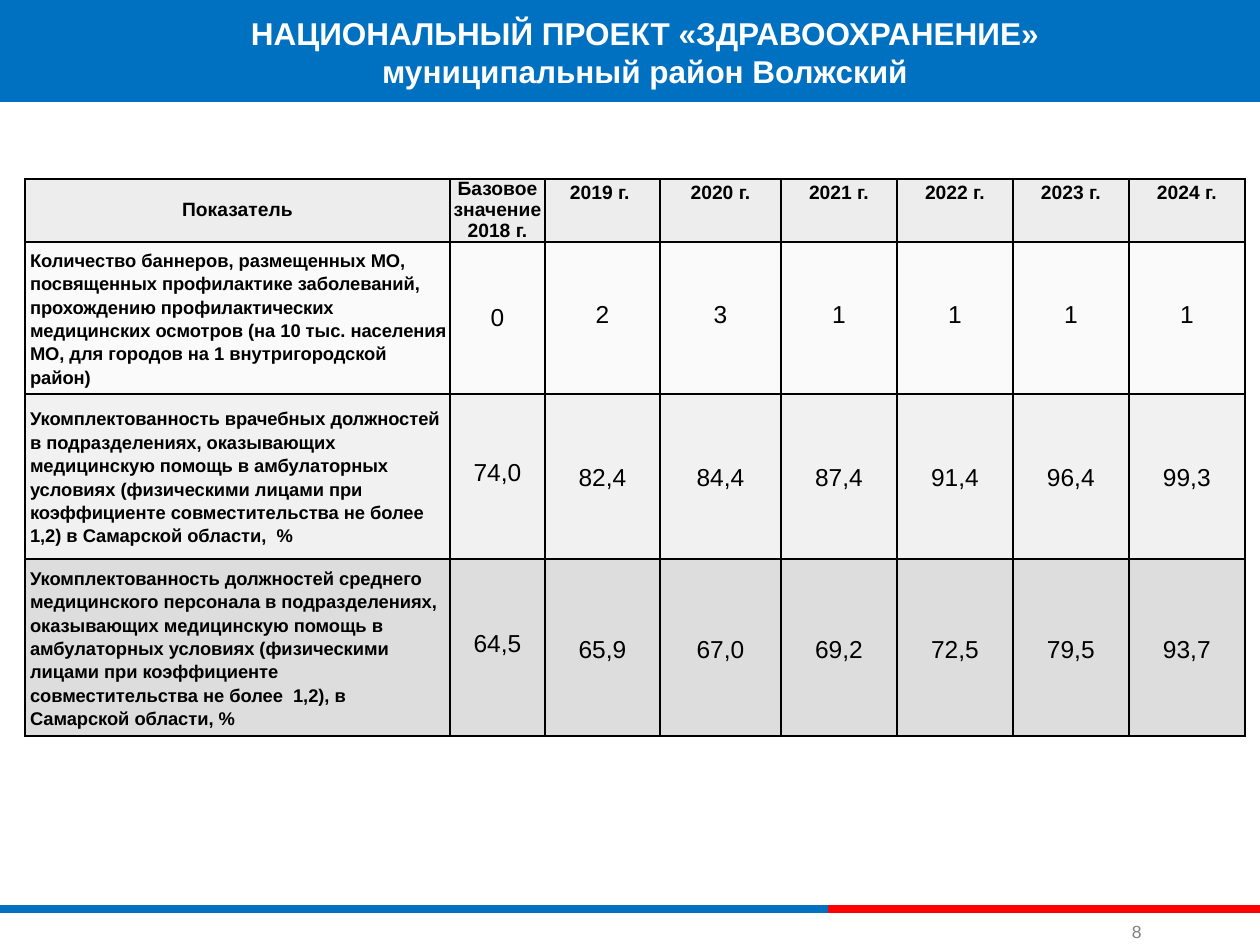
from lxml import etree
from pptx import Presentation
from pptx.dml.color import RGBColor
from pptx.enum.shapes import MSO_CONNECTOR, MSO_SHAPE
from pptx.enum.text import MSO_ANCHOR as ANCHOR, PP_ALIGN as ALIGN
from pptx.oxml import parse_xml
from pptx.oxml.ns import nsdecls, qn
from pptx.util import Emu, Pt

SCALE = 914400 / 126


def px(value):
    return Emu(round(value * SCALE))


def paint(color_format, hex_color):
    color_format.rgb = RGBColor.from_string(hex_color)


deck = Presentation()
deck.slide_width, deck.slide_height = px(1260), px(945)
slide = deck.slides.add_slide(deck.slide_layouts[6])
shapes = slide.shapes

for start, end, color in [(0, 828, "0070C1"), (828, 1260, "FF0000")]:
    stripe = shapes.add_connector(MSO_CONNECTOR.STRAIGHT, px(start), px(909), px(end), px(909))
    paint(stripe.line.color, color)
    stripe.line.width = Pt(5)
    etree.SubElement(stripe._element.spPr, qn("a:effectLst"))

banner = shapes.add_shape(MSO_SHAPE.RECTANGLE, 0, px(-4), px(1260), px(106))
banner.shadow.inherit = False
banner.fill.solid()
paint(banner.fill.fore_color, "0070C1")
banner.line.fill.background()

labels = [
    ((1126, 916, 24, 32), ["8"], 10, "808080", False, ALIGN.LEFT, ANCHOR.BOTTOM),
    ((237, 8, 816, 89), ["НАЦИОНАЛЬНЫЙ ПРОЕКТ «ЗДРАВООХРАНЕНИЕ»", "муниципальный район Волжский"],
     18, "FFFFFF", True, ALIGN.CENTER, ANCHOR.TOP),
]
for place, lines, size, color, bold, align, anchor in labels:
    frame = shapes.add_textbox(*map(px, place)).text_frame
    frame.word_wrap = False
    frame.vertical_anchor = anchor
    for side in ("left", "top", "right", "bottom"):
        setattr(frame, f"margin_{side}", px(6))
    frame.text = "\n".join(lines)
    for paragraph in frame.paragraphs:
        paragraph.alignment = align
        for name, value in {"name": "Arial", "size": Pt(size), "bold": bold}.items():
            setattr(paragraph.font, name, value)
        paint(paragraph.font.color, color)

rows = [
    ["Показатель", "Базовое значение 2018 г.", "2019 г. ", "2020 г.", "2021 г.", "2022 г.",
     "2023 г.", "2024 г."],
    ["Количество баннеров, размещенных МО, посвященных профилактике заболеваний, прохождению "
     "профилактических медицинских осмотров (на 10 тыс. населения МО, для городов на 1 "
     "внутригородской район)", "0", "2", "3", "1", "1", "1", "1"],
    ["Укомплектованность врачебных должностей в подразделениях, оказывающих медицинскую помощь "
     "в амбулаторных условиях (физическими лицами при коэффициенте совместительства не более  "
     "1,2) в Самарской области,  %", "74,0", "82,4", "84,4", "87,4", "91,4", "96,4", "99,3"],
    ["Укомплектованность должностей среднего медицинского персонала в подразделениях, "
     "оказывающих медицинскую помощь в амбулаторных условиях (физическими лицами при "
     "коэффициенте совместительства не более  1,2), в Самарской области, %",
     "64,5", "65,9", "67,0", "69,2", "72,5", "79,5", "93,7"],
]
widths = [425, 95, 115, 121] + [116] * 4
heights = [63, 152, 165, 177]
row_fills = [("EDEDED", 100), ("F2F2F2", 36), ("D9D9D9", 35), ("BFBFBF", 52)]
header_anchors = [ANCHOR.MIDDLE, ANCHOR.BOTTOM] + [ANCHOR.TOP] * 6
value_spacing = [None, Pt(12), Pt(18), Pt(18)]
base_spacing = [None, 1.0, Pt(12), Pt(12)]

indicators = shapes.add_table(4, 8, px(25), px(179), px(sum(widths)), px(sum(heights))).table
indicators.first_row = indicators.horz_banding = False
for column, width in zip(indicators.columns, widths):
    column.width = px(width)

for r, (texts, height, (color, opacity)) in enumerate(zip(rows, heights, row_fills)):
    indicators.rows[r].height = px(height)
    for c, text in enumerate(texts):
        cell = indicators.cell(r, c)
        cell.text = text
        paragraph = cell.text_frame.paragraphs[0]
        header, indicator = r == 0, c == 0
        if header:
            spacing = Pt(12) if c < 2 else 1.15
            size, inset = 11, 1
        elif indicator:
            spacing, size, inset = 1.15, 10.5, 1
            paragraph._p.get_or_add_pPr().set("marL", str(px(4)))
        elif c == 1:
            spacing, size, inset = base_spacing[r], 14, 0 if r == 1 else 1
        else:
            spacing, size, inset = value_spacing[r], 14, 5
            if r == 1:
                paragraph.space_after = Pt(6)
        paragraph.line_spacing = spacing
        paragraph.alignment = ALIGN.LEFT if indicator and not header else ALIGN.CENTER
        font = paragraph.runs[0].font
        for name, value in {"name": "Arial", "size": Pt(size), "bold": header or indicator}.items():
            setattr(font, name, value)
        paint(font.color, "000000")

        cell.vertical_anchor = header_anchors[c] if header else ANCHOR.MIDDLE
        cell.margin_left = cell.margin_right = px(inset)
        cell.margin_top = cell.margin_bottom = 0
        cell.fill.solid()
        paint(cell.fill.fore_color, color)
        properties = cell._tc.get_or_add_tcPr()
        if opacity < 100:
            tint = properties.find(".//" + qn("a:srgbClr"))
            etree.SubElement(tint, qn("a:alpha"), val=str(opacity * 1000))
        for position, side in enumerate("LRTB"):
            properties.insert(position, parse_xml(
                f'<a:ln{side} {nsdecls("a")} w="{Pt(1)}"><a:solidFill>'
                f'<a:srgbClr val="000000"/></a:solidFill></a:ln{side}>'))

deck.save("out.pptx")
